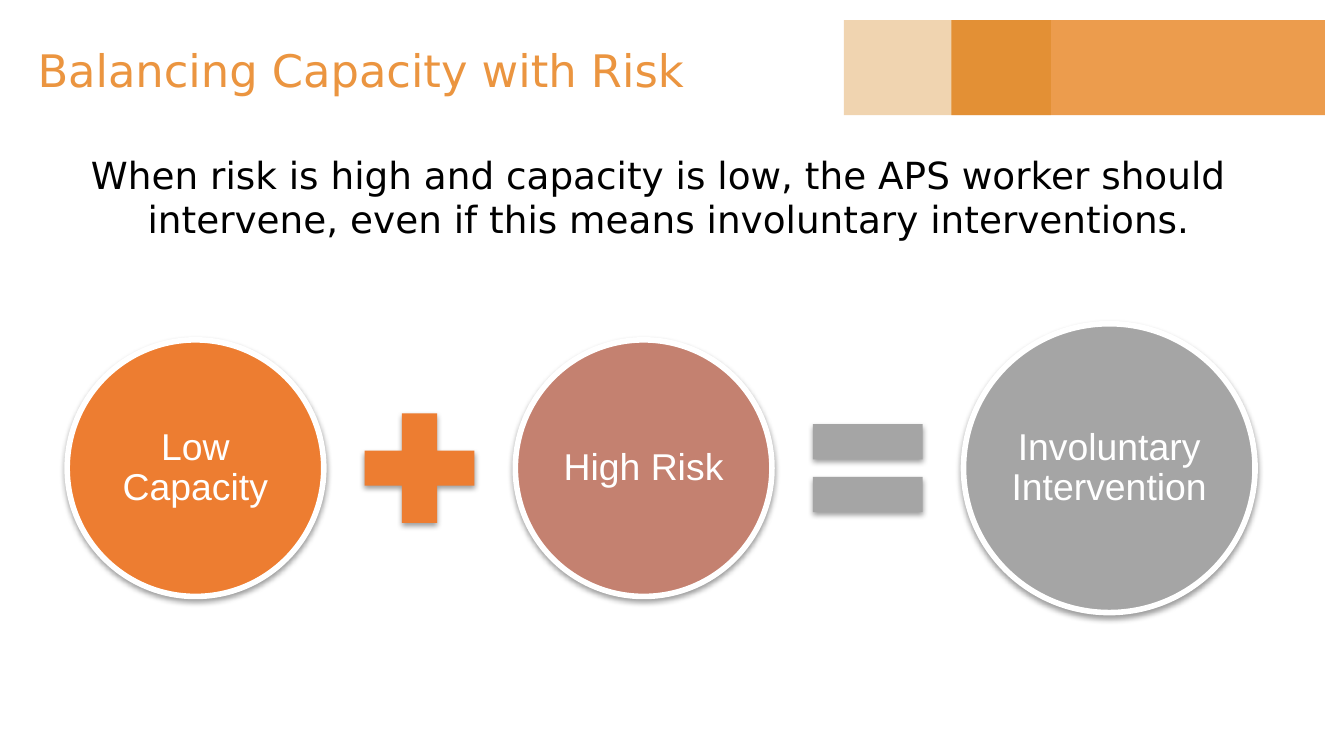
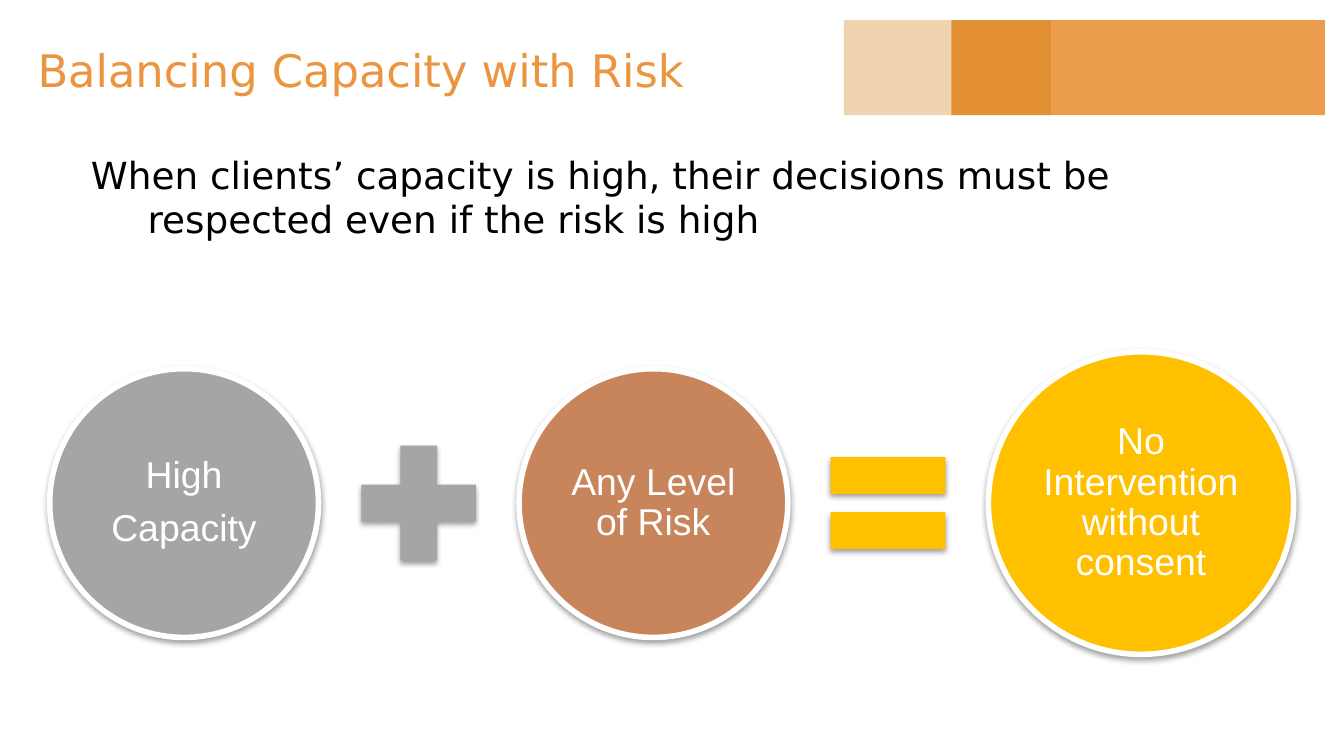
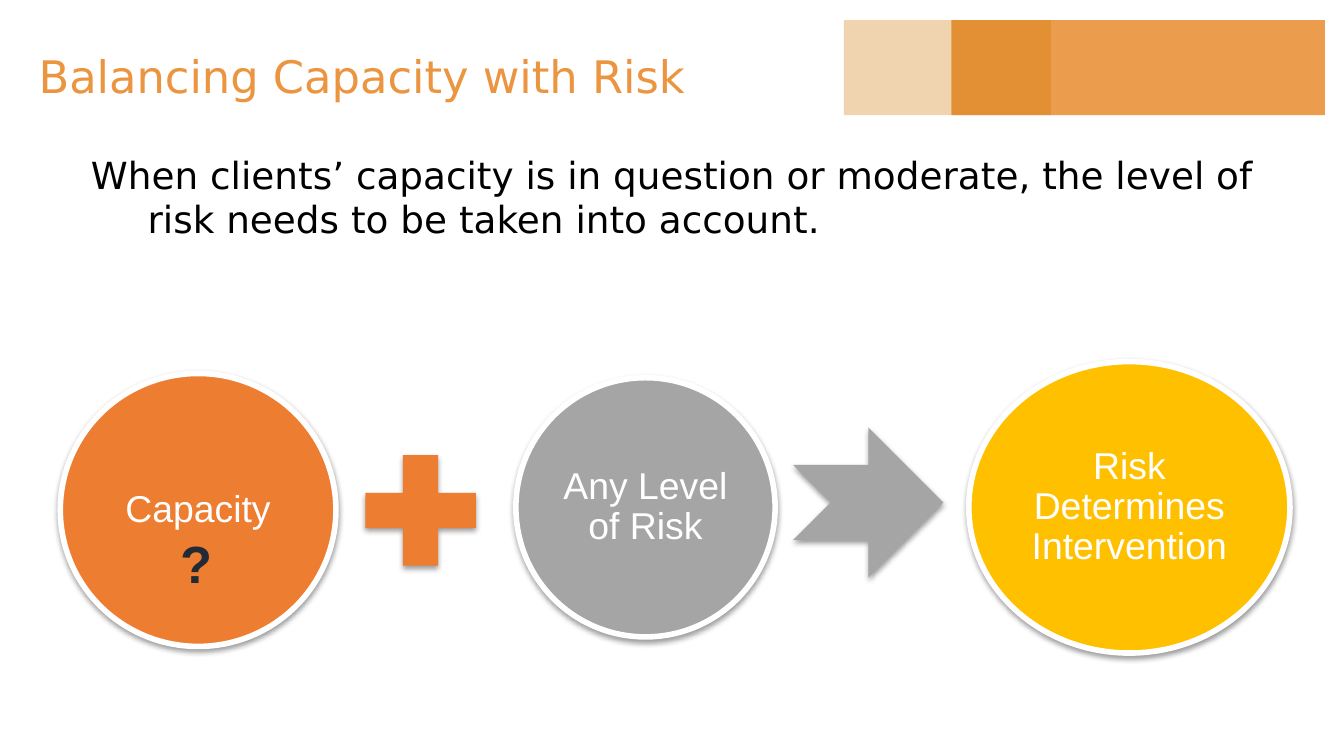
from dataclasses import dataclass
from typing import Optional

import lxml.etree
import pptx
import pptx.dml.color
import pptx.enum.shapes
import pptx.enum.text
import pptx.oxml.ns
import pptx.util

Cm = pptx.util.Cm
Pt = pptx.util.Pt
Shape = pptx.enum.shapes.MSO_SHAPE
Align = pptx.enum.text.PP_ALIGN
Anchor = pptx.enum.text.MSO_ANCHOR
qn = pptx.oxml.ns.qn

COLORS = {
    "title": "EB9540",
    "dark band": "D07700",
    "text": "000000",
    "white": "FFFFFF",
    "orange": "ED7D31",
    "rose": "C48170",
    "copper": "C8855C",
    "gray": "A5A5A5",
    "gold": "FFC000",
    "navy": "222A35",
}
TITLE = "Balancing Capacity with Risk"
TITLE_FONT = "DejaVu Sans"
CIRCLE_FONT = "Arial"


@dataclass
class Box:
    left: float
    top: float
    width: float
    height: float


@dataclass
class Band:
    box: Box
    color: str
    opacity: int


@dataclass
class Symbol:
    kind: Shape
    color: str
    width: float
    height: float
    text: str = ""
    shift_x: float = 0
    shift_y: float = 0


@dataclass
class Equation:
    statement: str
    left: float
    middle: float
    gap: float
    symbols: list[Symbol]
    title_box: Box
    question: Optional[Box] = None


BANDS = [
    Band(Box(17.98, 0.38, 7.06, 1.8), "title", 93),
    Band(Box(15.95, 0.38, 3.91, 1.8), "dark band", 31),
]
TITLE_BOX = Box(0.46, 0.13, 22.86, 2.39)
STATEMENT_BOX = Box(1.27, 2.62, 22.86, 2.64)

EQUATIONS = [
    Equation(
        "When risk is high and capacity is low, the APS worker should "
        "intervene, even if this means involuntary interventions.",
        1.27, 8.85, 0.4,
        [
            Symbol(Shape.OVAL, "orange", 4.85, 4.85, "Low Capacity"),
            Symbol(Shape.MATH_PLUS, "orange", 2.82, 2.82),
            Symbol(Shape.OVAL, "rose", 4.85, 4.85, "High Risk"),
            Symbol(Shape.MATH_EQUAL, "gray", 2.82, 2.82),
            Symbol(Shape.OVAL, "gray", 5.51, 5.46, "Involuntary Intervention"),
        ],
        TITLE_BOX,
    ),
    Equation(
        "When clients’ capacity is high, their decisions must be "
        "respected even if the risk is high",
        0.94, 9.51, 0.42,
        [
            Symbol(Shape.OVAL, "gray", 5.08, 5.08, "High\nCapacity"),
            Symbol(Shape.MATH_PLUS, "gray", 2.95, 2.95),
            Symbol(Shape.OVAL, "copper", 5.08, 5.08, "Any Level of Risk"),
            Symbol(Shape.MATH_EQUAL, "gold", 2.95, 2.95),
            Symbol(Shape.OVAL, "gold", 5.77, 5.72, "No Intervention without consent"),
        ],
        TITLE_BOX,
    ),
    Equation(
        "When clients’ capacity is in question or moderate, the level of "
        "risk needs to be taken into account.",
        1.14, 9.59, 0.38,
        [
            Symbol(Shape.OVAL, "orange", 5.21, 5.16, "Capacity", shift_y=0.05),
            Symbol(Shape.MATH_PLUS, "orange", 2.84, 2.84, shift_x=-0.2, shift_y=0.06),
            Symbol(Shape.OVAL, "gray", 4.9, 4.9, "Any Level of Risk"),
            Symbol(Shape.NOTCHED_RIGHT_ARROW, "gray", 2.84, 2.84, shift_x=-0.04, shift_y=-0.09),
            Symbol(Shape.OVAL, "gold", 6.07, 5.51, "Risk Determines Intervention", shift_x=0.1),
        ],
        Box(0.48, 0.23, 22.86, 2.39),
        Box(2.36, 9.91, 2.69, 1.45),
    ),
]


def rgb(name: str) -> pptx.dml.color.RGBColor:
    return pptx.dml.color.RGBColor.from_string(COLORS[name])


def place(box: Box) -> list[pptx.util.Length]:
    return [Cm(length) for length in (box.left, box.top, box.width, box.height)]


def write(shape, text: str, *, size: float, font: str, color: str, bold: bool = False,
          align=Align.LEFT, anchor=Anchor.TOP, inset: float = 0.25,
          line_spacing: float = 1.0, after: float = 0, margin: float = 0,
          indent: float = 0, tracking: float = 0) -> None:
    frame = shape.text_frame
    frame.word_wrap = True
    frame.vertical_anchor = anchor
    frame.margin_left = frame.margin_right = Cm(inset)
    frame.margin_top = frame.margin_bottom = Cm(inset)
    for index, line in enumerate(text.split("\n")):
        para = frame.add_paragraph() if index else frame.paragraphs[0]
        para.alignment = align
        para.line_spacing = line_spacing
        para.space_after = Pt(after)
        properties = para._p.get_or_add_pPr()
        properties.set("marL", str(Cm(margin)))
        properties.set("indent", str(Cm(indent)))
        span = para.add_run()
        span.text = line
        span.font.size = Pt(size)
        span.font.name = font
        span.font.bold = bold
        span.font.color.rgb = rgb(color)
        if tracking:
            span._r.get_or_add_rPr().set("spc", str(round(tracking * 100)))


def add_filled(page, kind: Shape, box: Box, color: str):
    shape = page.shapes.add_shape(kind, *place(box))
    shape.shadow.inherit = False
    shape.fill.solid()
    shape.fill.fore_color.rgb = rgb(color)
    shape.line.fill.background()
    return shape


def set_opacity(color_element, percent: int) -> None:
    alpha = lxml.etree.SubElement(color_element, qn("a:alpha"))
    alpha.set("val", str(percent * 1000))


def add_shadow(shape) -> None:
    effects = shape.element.spPr.find(qn("a:effectLst"))
    shadow = lxml.etree.SubElement(effects, qn("a:outerShdw"))
    for name, value in (("blurRad", Pt(3.1)), ("dist", Pt(1.6)), ("dir", 90 * 60000)):
        shadow.set(name, str(value))
    shadow.set("rotWithShape", "0")
    color = lxml.etree.SubElement(shadow, qn("a:srgbClr"))
    color.set("val", COLORS["text"])
    set_opacity(color, 38)


def add_band(page, band: Band) -> None:
    shape = add_filled(page, Shape.RECTANGLE, band.box, band.color)
    set_opacity(shape.element.spPr.find(f"{qn('a:solidFill')}/{qn('a:srgbClr')}"), band.opacity)


def add_symbol(page, symbol: Symbol, left: float, middle: float) -> None:
    top = middle + symbol.shift_y - symbol.height / 2
    shape = add_filled(page, symbol.kind, Box(left, top, symbol.width, symbol.height), symbol.color)
    add_shadow(shape)
    if symbol.text:
        shape.line.color.rgb = rgb("white")
        shape.line.width = Pt(3)
        write(shape, symbol.text, size=20, font=CIRCLE_FONT, color="white", align=Align.CENTER,
              anchor=Anchor.MIDDLE, inset=0.08, line_spacing=0.9, after=7)


def add_equation(deck, equation: Equation) -> None:
    page = deck.slides.add_slide(deck.slide_layouts[6])
    for band in BANDS:
        add_band(page, band)
    title = page.shapes.add_textbox(*place(equation.title_box))
    write(title, TITLE, size=24, font=TITLE_FONT, color="title", anchor=Anchor.MIDDLE)
    statement = page.shapes.add_textbox(*place(STATEMENT_BOX))
    write(statement, equation.statement, size=20, font=TITLE_FONT, color="text",
          margin=1.27, indent=-1.07)
    left = equation.left
    for symbol in equation.symbols:
        left += symbol.shift_x
        add_symbol(page, symbol, left, equation.middle)
        left += symbol.width + equation.gap
    if equation.question:
        question = page.shapes.add_textbox(*place(equation.question))
        write(question, "?", size=28, font=CIRCLE_FONT, color="navy", bold=True,
              align=Align.CENTER, inset=0.13, tracking=0.5)


def main() -> None:
    deck = pptx.Presentation()
    deck.slide_width = Cm(25.4)
    deck.slide_height = Cm(14.29)
    for equation in EQUATIONS:
        add_equation(deck, equation)
    deck.save("out.pptx")


if __name__ == "__main__":
    main()
